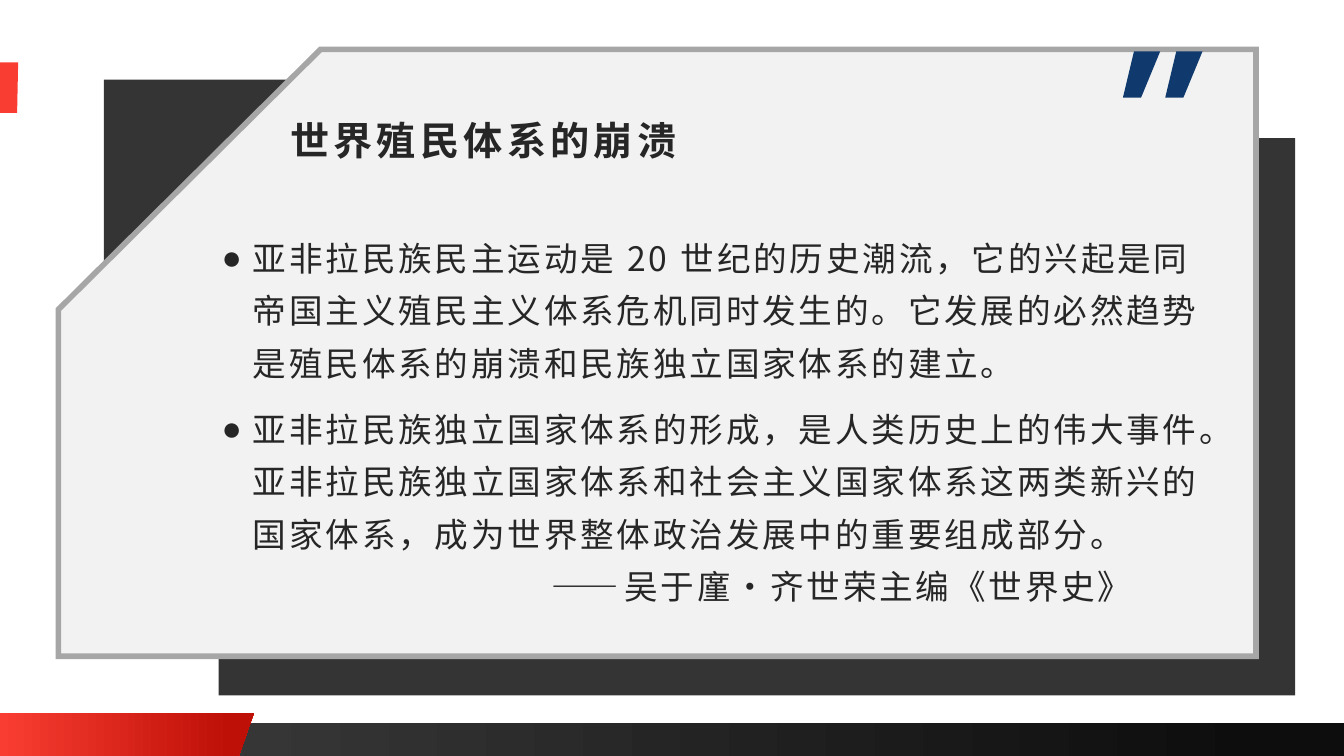
from lxml.etree import SubElement
from pptx import Presentation
from pptx.dml.color import RGBColor
from pptx.enum.shapes import MSO_SHAPE as Preset
from pptx.enum.text import MSO_ANCHOR as Anchor, MSO_AUTO_SIZE as AutoSize, PP_ALIGN as Align
from pptx.oxml.ns import qn
from pptx.util import Inches, Pt

SLIDE_WIDTH, SLIDE_HEIGHT = Inches(13.33), Inches(7.5)
COLUMNS, ROWS = 80, 45
DARK, RED, PANEL, BORDER = "343434", "F93D32", "F2F2F2", "A6A6A6"
NAVY, INK = "103A6E", "262626"
CJK_FONT = "Noto Sans CJK SC"

TITLE = "世界殖民体系的崩溃"
POINTS = [
    "亚非拉民族民主运动是 20 世纪的历史潮流，它的兴起是同帝国主义殖民主义体系危机同时发生的。"
    "它发展的必然趋势是殖民体系的崩溃和民族独立国家体系的建立。",
    "亚非拉民族独立国家体系的形成，是人类历史上的伟大事件。"
    "亚非拉民族独立国家体系和社会主义国家体系这两类新兴的国家体系，"
    "成为世界整体政治发展中的重要组成部分。",
]
CITATION = "——吴于廑·齐世荣主编《世界史》"


def across(columns):
    return round(SLIDE_WIDTH * columns / COLUMNS)


def down(rows):
    return round(SLIDE_HEIGHT * rows / ROWS)


def grid_box(left, top, width, height):
    return across(left), down(top), across(width), down(height)


def color(hex_value):
    return RGBColor.from_string(hex_value)


def paint(shape, *colors, end=1.0):
    shape.shadow.inherit = False
    shape.line.fill.background()
    if len(colors) == 1:
        shape.fill.solid()
        shape.fill.fore_color.rgb = color(colors[0])
        return
    shape.fill.gradient()
    shape.fill.gradient_angle = 0
    for stop, hex_value, position in zip(shape.fill.gradient_stops, colors, (0, end)):
        stop.color.rgb = color(hex_value)
        stop.position = position


def add_rectangle(slide, box, *colors, end=1.0):
    shape = slide.shapes.add_shape(Preset.RECTANGLE, *grid_box(*box))
    paint(shape, *colors, end=end)


def add_polygon(slide, points, *colors, end=1.0):
    corners = [(across(x), down(y)) for x, y in points]
    builder = slide.shapes.build_freeform(*corners[0])
    builder.add_line_segments(corners[1:], close=True)
    shape = builder.convert_to_shape()
    paint(shape, *colors, end=end)
    return shape


def add_border(shape, hex_value, width):
    shape.line.color.rgb = color(hex_value)
    shape.line.width = Pt(width)
    SubElement(shape.line._ln, qn("a:miter"), lim="800000")


def set_frame(shape):
    frame = shape.text_frame
    frame.word_wrap = True
    frame.auto_size = AutoSize.NONE
    frame.vertical_anchor = Anchor.TOP
    frame.margin_left = frame.margin_right = Inches(0.1)
    frame.margin_top = frame.margin_bottom = Inches(0.05)
    return frame


def add_run(paragraph, text, font, size, spacing, bold=False):
    run = paragraph.add_run()
    run.text = text
    run.font.size = Pt(size)
    run.font.bold = bold
    run.font.color.rgb = color(INK)
    run.font.name = font
    properties = run._r.get_or_add_rPr()
    properties.set("spc", str(spacing * 100))
    SubElement(properties, qn("a:ea"), typeface=CJK_FONT)


def set_indent(paragraph, left, first=0, bullet=None):
    properties = paragraph._p.get_or_add_pPr()
    properties.set("marL", str(across(left)))
    properties.set("indent", str(across(first)))
    if bullet:
        SubElement(properties, qn("a:buFont"), typeface="Arial")
        SubElement(properties, qn("a:buChar"), char=bullet)


def place_title(slide, panel):
    title = slide.shapes.title
    title.left, title.top, title.width, title.height = grid_box(16.68, 6.06, 26.64, 4.14)
    panel._element.addnext(title._element)
    paragraph = set_frame(title).paragraphs[0]
    paragraph.alignment = Align.LEFT
    paragraph.line_spacing = 1.2
    add_run(paragraph, TITLE, "Arial", 28, 3, bold=True)


def add_body(slide):
    frame = set_frame(slide.shapes.add_textbox(*grid_box(12.6, 13.14, 60.12, 23.34)))
    for index, text in enumerate([*POINTS, CITATION]):
        paragraph = frame.paragraphs[0] if index == 0 else frame.add_paragraph()
        if text == CITATION:
            set_indent(paragraph, 19.65)
        else:
            set_indent(paragraph, 1.86, -1.86, "●")
        paragraph.line_spacing = 1.3
        paragraph.space_before = Pt(10 if 0 < index < len(POINTS) else 0)
        add_run(paragraph, text, CJK_FONT, 24, 2)


def add_quote_marks(slide):
    for left in (66.84, 69.36):
        outline = [(0.66, 0), (2.22, 0), (1.08, 2.76), (0, 2.76)]
        add_polygon(slide, [(left + x, 3.06 + y) for x, y in outline], NAVY)


def main():
    presentation = Presentation()
    presentation.slide_width, presentation.slide_height = SLIDE_WIDTH, SLIDE_HEIGHT
    slide = presentation.slides.add_slide(presentation.slide_layouts[5])

    add_rectangle(slide, (0, 43.02, 80, 1.98), "404040", "0D0D0D", end=0.94)
    footer_tab = [(0, 42.42), (15.12, 42.42), (14.22, 45), (0, 45)]
    add_polygon(slide, footer_tab, RED, "BE1007", end=0.91)
    add_polygon(slide, [(0, 3.72), (1.08, 3.72), (1.02, 6.72), (0, 6.72)], RED)

    add_rectangle(slide, (6.18, 4.74, 14.22, 15.54), DARK)
    backing = [(74.58, 8.22), (77.1, 8.22), (77.1, 41.4),
               (13.02, 41.4), (13.02, 39.06), (74.58, 39.06)]
    add_polygon(slide, backing, DARK)
    panel_outline = [(19.08, 2.94), (74.76, 2.94), (74.76, 39.06),
                     (3.48, 39.06), (3.48, 18.42)]
    panel = add_polygon(slide, panel_outline, PANEL)
    add_border(panel, BORDER, 4)

    place_title(slide, panel)
    add_body(slide)
    add_quote_marks(slide)
    presentation.save("out.pptx")


if __name__ == "__main__":
    main()
